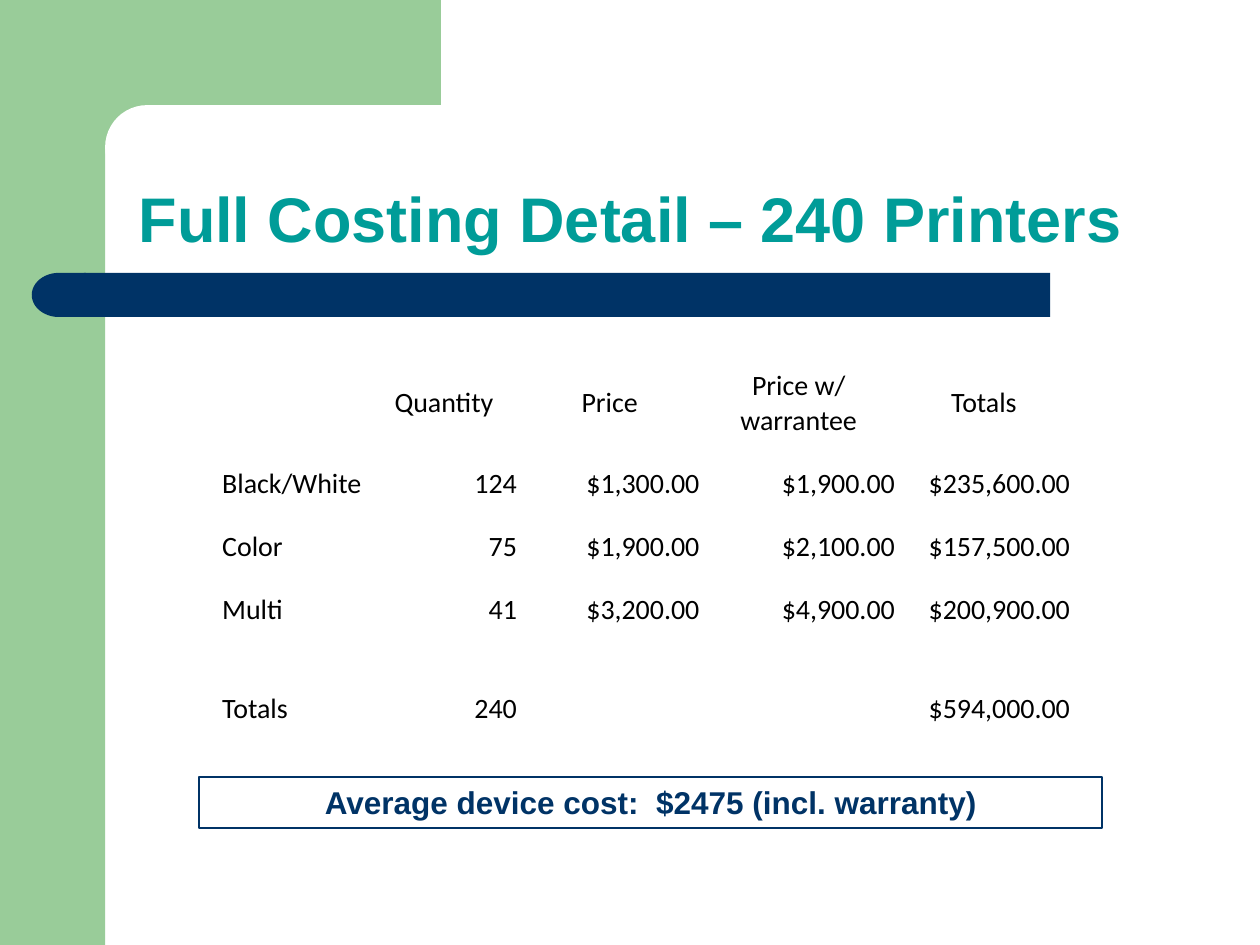
"""Build the printer costing slide with its decorative frame, price table and average cost."""

from dataclasses import dataclass

from pptx import Presentation
from pptx.dml.color import RGBColor
from pptx.enum.shapes import MSO_SHAPE as Preset
from pptx.enum.text import MSO_ANCHOR as Anchor, MSO_AUTO_SIZE as AutoSize, PP_ALIGN as Align
from pptx.shapes.autoshape import Shape
from pptx.slide import Slide
from pptx.table import _Cell as Cell
from pptx.text.text import _Paragraph as Paragraph
from pptx.util import Cm, Pt

COLORS = {
    "green": "99CC99",
    "navy": "003366",
    "teal": "009C98",
    "white": "FFFFFF",
    "black": "000000",
}
COLUMN_WIDTHS = (3.0, 3.0, 3.68, 3.94, 3.53)
ROW_HEIGHTS = (1.27, 1.27, 1.27, 1.27, 0.74, 1.27)
COSTS = (
    ("", "Quantity", "Price", "Price w/ warrantee", "Totals"),
    ("Black/White", "124", "$1,300.00", "$1,900.00", "$235,600.00"),
    ("Color", "75", "$1,900.00", "$2,100.00", "$157,500.00"),
    ("Multi", "41", "$3,200.00", "$4,900.00", "$200,900.00"),
    ("", "", "", "", ""),
    ("Totals", "240", "", "", "$594,000.00"),
)


@dataclass(frozen=True)
class Box:
    """A rectangle in centimetres."""

    left: float
    top: float
    width: float
    height: float

    def lengths(self) -> tuple[Cm, Cm, Cm, Cm]:
        """Return the position and size as lengths."""
        return Cm(self.left), Cm(self.top), Cm(self.width), Cm(self.height)


@dataclass(frozen=True)
class Panel:
    """A filled part of the decorative frame."""

    preset: Preset
    box: Box
    color: str
    rotation: int = 0


PANELS = (
    Panel(Preset.RECTANGLE, Box(0, 0, 2.12, 19.05), "green"),
    Panel(Preset.RECTANGLE, Box(1.9, 0, 6.99, 2.96), "green"),
    Panel(Preset.ROUNDED_RECTANGLE, Box(2.12, 2.12, 14.18, 1.69), "white"),
    Panel(Preset.RECTANGLE, Box(1.69, 5.5, 19.48, 0.89), "navy"),
    Panel(Preset.FLOWCHART_DELAY, Box(0.64, 5.5, 1.09, 0.89), "navy", 180),
)
TITLE_BOX = Box(2.54, 2.12, 22.23, 3.18)
TABLE_BOX = Box(4.45, 7.41, sum(COLUMN_WIDTHS), sum(ROW_HEIGHTS))
AVERAGE_BOX = Box(4.02, 15.66, 18.2, 1.03)


def rgb(name: str) -> RGBColor:
    """Look up a named colour."""
    return RGBColor.from_string(COLORS[name])


def set_font(paragraph: Paragraph, name: str, size: int, color: str, bold: bool = False) -> None:
    """Format the font of a whole paragraph."""
    font = paragraph.font
    font.name, font.size, font.bold = name, Pt(size), bold
    font.color.rgb = rgb(color)


def add_panel(slide: Slide, panel: Panel) -> Shape:
    """Draw one panel of the frame."""
    shape = slide.shapes.add_shape(panel.preset, *panel.box.lengths())
    shape.shadow.inherit = False
    shape.fill.solid()
    shape.fill.fore_color.rgb = rgb(panel.color)
    shape.line.fill.background()
    shape.rotation = panel.rotation
    if panel.preset == Preset.ROUNDED_RECTANGLE:
        shape.adjustments[0] = 0.5
    return shape


def place_title(slide: Slide, text: str) -> None:
    """Fill and format the title placeholder."""
    title = slide.shapes.title
    title.left, title.top, title.width, title.height = TITLE_BOX.lengths()
    frame = title.text_frame
    frame.text = text
    frame.auto_size = AutoSize.NONE
    frame.vertical_anchor = Anchor.BOTTOM
    paragraph = frame.paragraphs[0]
    paragraph.alignment = Align.LEFT
    paragraph.line_spacing = 0.9
    set_font(paragraph, "Arial", 36, "teal", bold=True)


def fill_cell(cell: Cell, text: str, alignment: Align, anchor: Anchor) -> None:
    """Write and format one table cell."""
    cell.text = text
    cell.fill.background()
    cell.vertical_anchor = anchor
    cell.margin_left = cell.margin_right = cell.margin_top = Cm(0.03)
    cell.margin_bottom = 0
    paragraph = cell.text_frame.paragraphs[0]
    paragraph.alignment = alignment
    set_font(paragraph, "Calibri", 16, "black")


def add_cost_table(slide: Slide) -> None:
    """Draw the table of quantities and prices."""
    table = slide.shapes.add_table(len(COSTS), len(COLUMN_WIDTHS), *TABLE_BOX.lengths()).table
    table.first_row = table.horz_banding = False
    for column, width in zip(table.columns, COLUMN_WIDTHS):
        column.width = Cm(width)
    for row_index, (values, height) in enumerate(zip(COSTS, ROW_HEIGHTS)):
        table.rows[row_index].height = Cm(height)
        anchor = Anchor.BOTTOM if row_index else Anchor.MIDDLE
        for column_index, value in enumerate(values):
            alignment = Align.RIGHT if column_index else Align.LEFT
            if row_index == 0:
                alignment = Align.CENTER
            fill_cell(table.cell(row_index, column_index), value, alignment, anchor)


def add_average_cost(slide: Slide, text: str) -> None:
    """Draw the outlined average cost line."""
    shape = slide.shapes.add_shape(Preset.RECTANGLE, *AVERAGE_BOX.lengths())
    shape.shadow.inherit = False
    shape.fill.background()
    shape.line.color.rgb = rgb("navy")
    shape.line.width = Pt(1)
    frame = shape.text_frame
    frame.text = text
    frame.word_wrap = True
    frame.auto_size = AutoSize.SHAPE_TO_FIT_TEXT
    frame.vertical_anchor = Anchor.TOP
    paragraph = frame.paragraphs[0]
    paragraph.alignment = Align.CENTER
    set_font(paragraph, "Arial", 18, "navy", bold=True)


def main() -> None:
    """Build and save the presentation."""
    presentation = Presentation()
    presentation.slide_width, presentation.slide_height = Cm(25.4), Cm(19.05)
    slide = presentation.slides.add_slide(presentation.slide_layouts[5])
    title_element = slide.shapes.title.element
    for panel in PANELS:
        title_element.addprevious(add_panel(slide, panel).element)
    place_title(slide, "Full Costing Detail – 240 Printers")
    add_cost_table(slide)
    add_average_cost(slide, "Average device cost:  $2475 (incl. warranty)")
    presentation.save("out.pptx")


if __name__ == "__main__":
    main()
